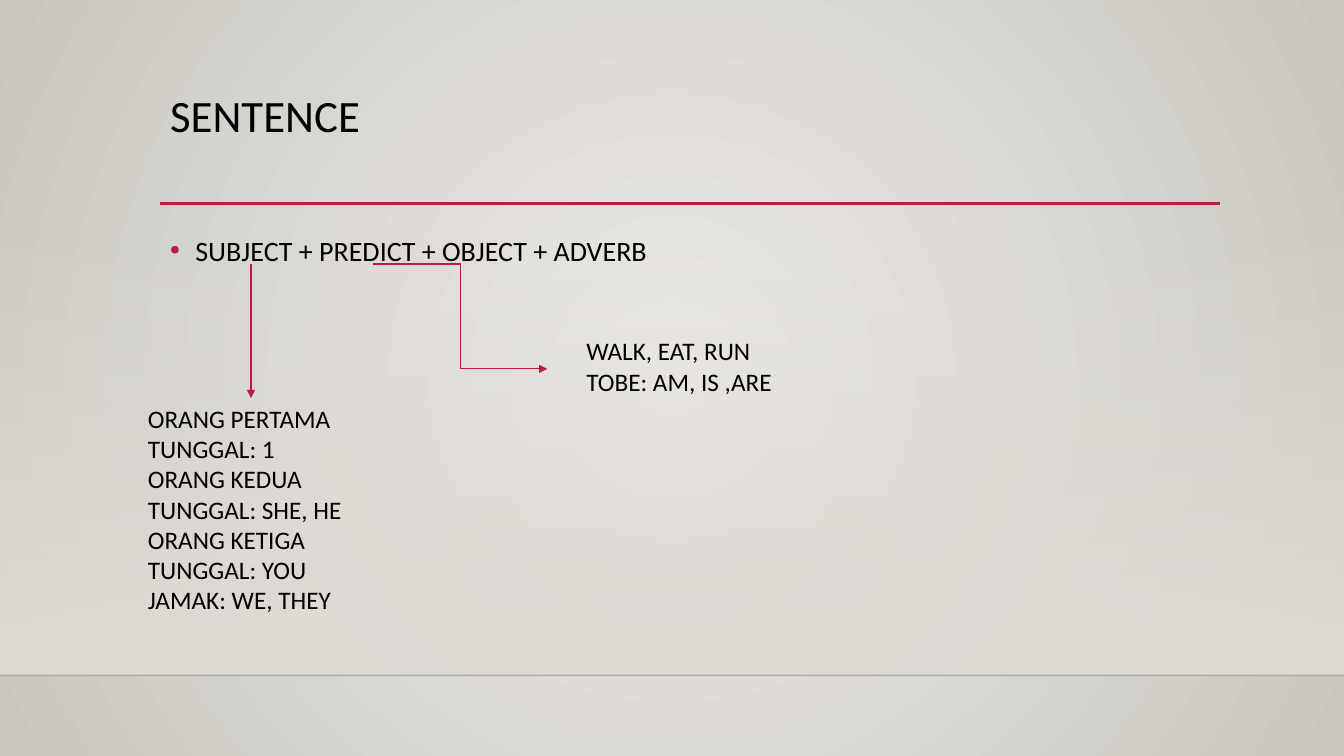
"""Build the SENTENCE slide: a sentence pattern with arrows to its word lists."""
import pptx
import pptx.dml.color
import pptx.enum.dml
import pptx.enum.shapes
import pptx.enum.text
import pptx.oxml
import pptx.oxml.ns
import pptx.util

Pt = pptx.util.Pt
qn = pptx.oxml.ns.qn
STRAIGHT = pptx.enum.shapes.MSO_CONNECTOR.STRAIGHT
ELBOW = pptx.enum.shapes.MSO_CONNECTOR.ELBOW

WIDTH, HEIGHT = 960, 540
FLOOR = 482.4
RED, BLACK, SAND = "B71E42", "000000", "DFDBD5"
FONT = "Calibri"

TITLE = "SENTENCE"
PATTERN = "SUBJECT + PREDICT + OBJECT + ADVERB"
SUBJECTS = [
    "ORANG PERTAMA TUNGGAL: 1",
    "ORANG KEDUA TUNGGAL: SHE, HE",
    "ORANG KETIGA TUNGGAL: YOU",
    "JAMAK: WE, THEY",
]
PREDICATES = ["WALK, EAT, RUN", "TOBE: AM, IS ,ARE"]

TEXTS = [
    ([TITLE], (114.5, 63.4, 756, 82.8), 32, 0.9),
    ([PATTERN], (114.5, 158.4, 756, 271.4), 20, 1.2),
    (SUBJECTS, (98.6, 284.4, 177.1, 159.8), 18, None),
    (PREDICATES, (411.8, 236.2, 168.5, 51.1), 18, None),
]
LINES = [
    (STRAIGHT, (0, FLOOR, WIDTH, FLOOR), BLACK, 1, 20, False),
    (STRAIGHT, (114.5, 145.4, 871.2, 145.4), RED, 2.5, 100, False),
    (STRAIGHT, (179.3, 188.6, 179.3, 284.4), RED, 0.75, 100, True),
    (ELBOW, (266.4, 188.6, 391, 263.5), RED, 0.75, 100, True),
]


def color(value):
    return pptx.dml.color.RGBColor.from_string(value)


def element(markup):
    name, rest = markup[1:].split(" ", 1)
    return pptx.oxml.parse_xml(f"<{name} {pptx.oxml.ns.nsdecls('a')} {rest}")


def set_gradient(fill, owner, stops, shade):
    fill.gradient()
    old = next(owner.iter(qn("a:gradFill")))
    marks = "".join(
        f'<a:gs pos="{place * 1000}"><a:srgbClr val="{value}">'
        f'<a:alpha val="{alpha * 1000}"/></a:srgbClr></a:gs>'
        for place, value, alpha in stops)
    new = element(f'<a:gradFill rotWithShape="1"><a:gsLst>{marks}</a:gsLst>{shade}</a:gradFill>')
    old.getparent().replace(old, new)


def add_line(page, kind, ends, value, weight, alpha, arrow):
    line = page.shapes.add_connector(kind, *map(Pt, ends))
    line.line.color.rgb = color(value)
    line.line.width = Pt(weight)
    properties = line.line._get_or_add_ln().getparent()
    outline = properties.find(qn("a:ln"))
    if alpha < 100:
        next(outline.iter(qn("a:srgbClr"))).append(element(f'<a:alpha val="{alpha * 1000}"/>'))
    if arrow:
        outline.append(element('<a:tailEnd type="triangle"/>'))
    properties.append(element("<a:effectLst />"))


def add_text(page, lines, place, size, spacing):
    box = page.shapes.add_textbox(*map(Pt, place))
    frame = box.text_frame
    frame.word_wrap = True
    frame.text = "\n".join(lines)
    for para in frame.paragraphs:
        if spacing:
            para.line_spacing = spacing
        for span in para.runs:
            span.font.name = FONT
            span.font.size = Pt(size)
            span.font.color.rgb = color(BLACK)
    return box


def add_bullet(para):
    properties = para._p.get_or_add_pPr()
    properties.set("marL", str(Pt(18)))
    properties.set("indent", str(Pt(-18)))
    properties.append(element(f'<a:buClr ><a:srgbClr val="{RED}"/></a:buClr>'))
    properties.append(element('<a:buFont typeface="Arial"/>'))
    properties.append(element('<a:buChar char="•"/>'))


def main():
    deck = pptx.Presentation()
    deck.slide_width, deck.slide_height = Pt(WIDTH), Pt(HEIGHT)
    page = deck.slides.add_slide(deck.slide_layouts[6])
    set_gradient(
        page.background.fill, page.element, [(0, "ECEAE7", 100), (100, "CAC7C1", 100)],
        '<a:path path="circle"><a:fillToRect l="50000" t="50000" r="50000" b="50000"/></a:path>')

    wall_top = 159.1
    wall = page.shapes.add_shape(
        pptx.enum.shapes.MSO_SHAPE.RECTANGLE, 0, Pt(wall_top), Pt(WIDTH), Pt(FLOOR - wall_top))
    wall.shadow.inherit = False
    wall.line.fill.background()
    set_gradient(wall.fill, wall.element, [(0, SAND, 0), (100, SAND, 100)],
                 '<a:lin ang="5400000" scaled="0"/>')

    for line in LINES:
        add_line(page, *line)
    boxes = [add_text(page, *text) for text in TEXTS]
    add_bullet(boxes[1].text_frame.paragraphs[0])
    deck.save("out.pptx")


if __name__ == "__main__":
    main()
